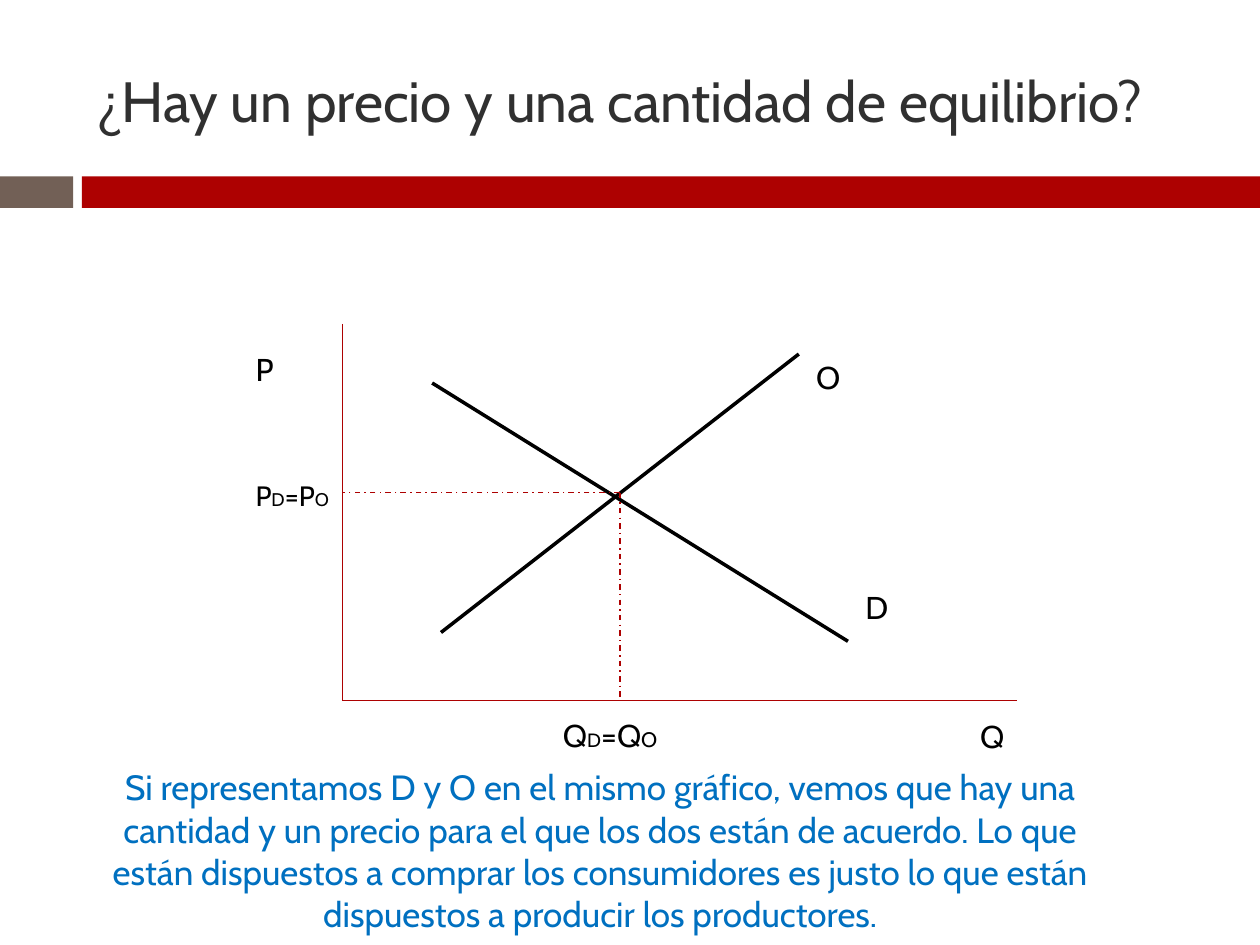
import pptx
import pptx.util
import pptx.dml.color
import pptx.enum.dml
import pptx.enum.shapes
import pptx.enum.text
import pptx.oxml

Inches = pptx.util.Inches
hues = {"red": "AD0101", "brown": "726056", "dark": "303030",
        "black": "000000", "blue": "0070C0"}
left, base, top = 2.72, 5.56, 2.57
qty, price = 4.92, 3.91


def tint(name):
    return pptx.dml.color.RGBColor.from_string(hues[name])


def write(slide, box, runs, hue, frame_set, para_set):
    frame = slide.shapes.add_textbox(*map(Inches, box)).text_frame
    for key, val in frame_set.items():
        setattr(frame, key, val)
    para = frame.paragraphs[0]
    for key, val in para_set.items():
        setattr(para, key, val)
    for text, size in runs:
        run = para.add_run()
        run.text = text
        style = {"name": "Cabin", "size": pptx.util.Pt(size)}
        for key, val in style.items():
            setattr(run.font, key, val)
        run.font.color.rgb = tint(hue)


deck = pptx.Presentation()
for key, val in {"slide_width": 10, "slide_height": 7.5}.items():
    setattr(deck, key, Inches(val))
slide = deck.slides.add_slide(deck.slide_layouts[6])

for x, wide, hue in [(0, 0.58, "brown"), (0.65, 9.35, "red")]:
    bar = slide.shapes.add_shape(
        pptx.enum.shapes.MSO_SHAPE.RECTANGLE,
        Inches(x), Inches(1.4), Inches(wide), Inches(0.25))
    bar.shadow.inherit = False
    bar.fill.solid()
    bar.fill.fore_color.rgb = tint(hue)
    bar.line.fill.background()

axis = {"width": pptx.util.Pt(0.79)}
curve = {"width": pptx.util.Pt(2)}
guide = {**axis, "dash_style": pptx.enum.dml.MSO_LINE.DASH_DOT}
lines = [
    ((left, top, left, base), "red", axis),
    ((left, base, 8.07, base), "red", axis),
    ((3.43, 3.04, 6.73, 5.09), "black", curve),
    ((3.5, 5.02, 6.34, 2.81), "black", curve),
    ((qty, price, qty, base), "red", guide),
    ((qty, price, left, price), "red", guide),
]
for ends, hue, style in lines:
    line = slide.shapes.add_connector(
        pptx.enum.shapes.MSO_CONNECTOR.STRAIGHT, *map(Inches, ends))
    line.line.color.rgb = tint(hue)
    for key, val in style.items():
        setattr(line.line, key, val)
    line._element.spPr.append(pptx.oxml.parse_xml(
        '<a:effectLst xmlns:a="http://schemas.openxmlformats.org/drawingml/2006/main"/>'))

wrap = {"word_wrap": True}
grow = {**wrap, "auto_size": pptx.enum.text.MSO_AUTO_SIZE.SHAPE_TO_FIT_TEXT}
free = {**grow, "word_wrap": False}
mid = {**wrap, "vertical_anchor": pptx.enum.text.MSO_ANCHOR.MIDDLE}
center = {"alignment": pptx.enum.text.PP_ALIGN.CENTER}

write(slide, (0.67, 0.25, 8.92, 1.08),
      [("¿Hay un precio y una cantidad de equilibrio?", 32.4)], "dark", mid, {})
labels = [
    ((6.77, 4.62, 0.35, 0.4), [("D", 18)], free),
    ((6.38, 2.79, 0.4, 0.4), [("O", 18)], free),
    ((1.93, 2.73, 0.79, 0.4), [("P", 18)], grow),
    ((7.68, 5.64, 1.1, 0.4), [("Q", 18)], grow),
    ((1.93, 3.75, 0.87, 0.37),
     [("P", 16), ("D", 10.5), ("=P", 16), ("O", 10.5)], grow),
    ((4.37, 5.63, 1.1, 0.4),
     [("Q", 18), ("D", 11), ("=Q", 18), ("O", 12)], grow),
]
for box, runs, fit in labels:
    write(slide, box, runs, "black", fit, {})
note = ("Si representamos D y O en el mismo gráfico, vemos que hay una cantidad "
        "y un precio para el que los dos están de acuerdo. Lo que están dispuestos "
        "a comprar los consumidores es justo lo que están dispuestos a producir "
        "los productores.")
write(slide, (0.59, 6.03, 8.35, 1.45), [(note, 20)], "blue", grow, center)

deck.save("out.pptx")
